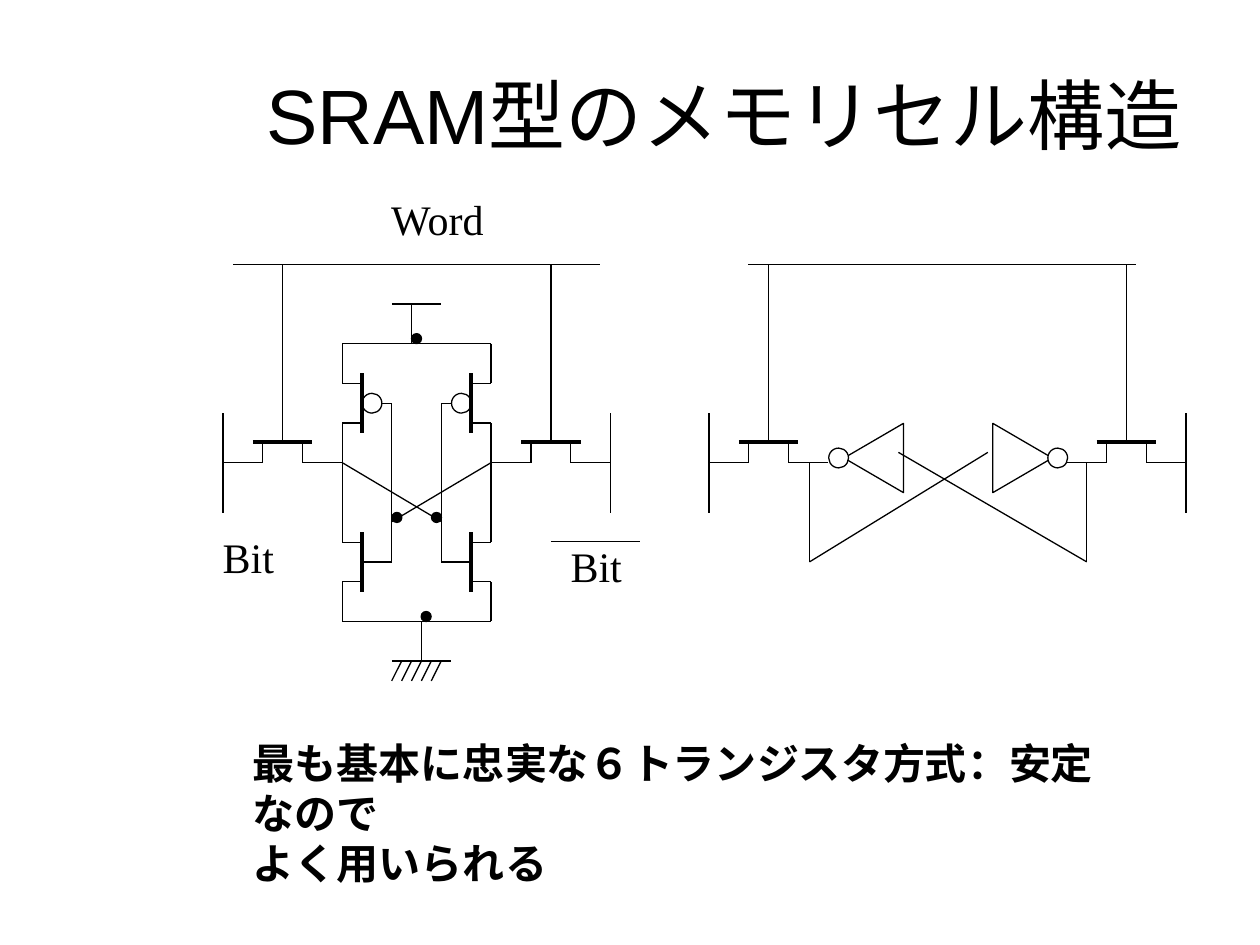
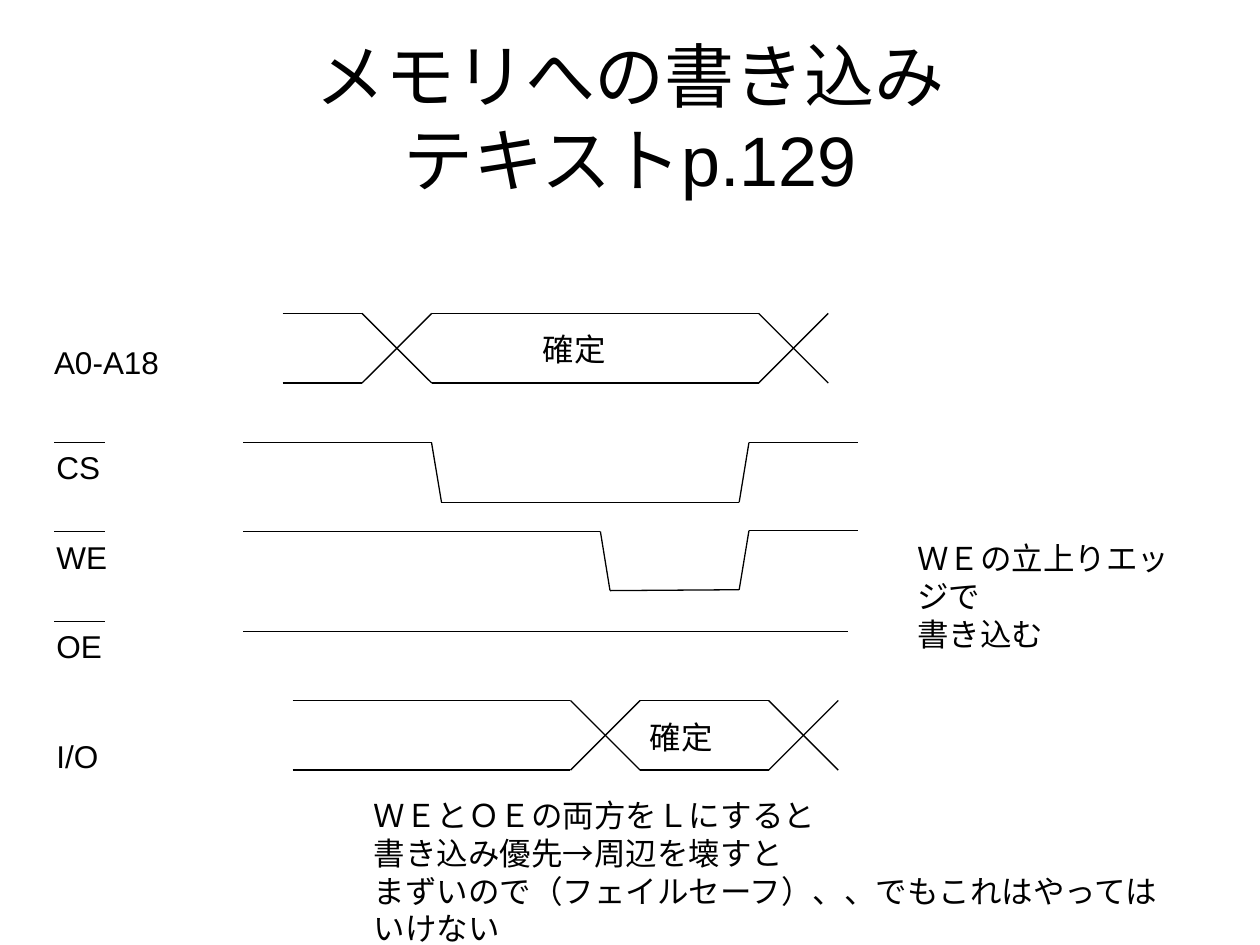
from itertools import pairwise

from pptx import Presentation
from pptx.dml.color import RGBColor
from pptx.enum.shapes import MSO_CONNECTOR, MSO_SHAPE
from pptx.enum.text import MSO_ANCHOR, PP_ALIGN
from pptx.oxml.ns import qn
from pptx.util import Pt

rgb = RGBColor.from_string
INK, PAPER = "000000", "FFFFFF"
THIN, THICK = 0.75, 2.25
TITLE = {"name": "Arial", "size": Pt(44)}
SUBTITLED = {"name": "Arial", "size": Pt(40)}
SIGNAL = {"name": "Arial", "size": Pt(18)}
CIRCUIT = {"name": "Times New Roman", "size": Pt(24)}
REMARK = {**CIRCUIT, "bold": True}


def wire(slide, x1, y1, x2, y2, width=THIN):
    line = slide.shapes.add_connector(
        MSO_CONNECTOR.STRAIGHT, Pt(x1), Pt(y1), Pt(x2), Pt(y2))
    line.line.color.rgb = rgb(INK)
    line.line.width = Pt(width)
    line._element.spPr.append(line._element.spPr.makeelement(qn("a:effectLst"), {}))


def write(slide, words, left, top, width, height, font, wrap=True):
    frame = slide.shapes.add_textbox(Pt(left), Pt(top), Pt(width), Pt(height)).text_frame
    frame.word_wrap = wrap
    frame.text = words
    is_title = font in (TITLE, SUBTITLED)
    frame.vertical_anchor = MSO_ANCHOR.MIDDLE if is_title else MSO_ANCHOR.TOP
    for paragraph in frame.paragraphs:
        paragraph.alignment = PP_ALIGN.CENTER if is_title else PP_ALIGN.LEFT
        for run in paragraph.runs:
            run.font.color.rgb = rgb(INK)
            for key, value in font.items():
                setattr(run.font, key, value)


prs = Presentation()
prs.slide_width, prs.slide_height = Pt(720), Pt(540)
blank = prs.slide_layouts[6]

# Slide 1: SRAM cell
cell = prs.slides.add_slide(blank)
write(cell, "SRAM型のメモリセル構造", 108, 20, 612, 90, TITLE)

# Shared heights of both circuits
word_y, gate_y, lead_y = 151.2, 252.8, 264.4
bit_top, bit_bottom = 236.2, 292.9
pmos_y, nmos_y = 230.4, 321.1
power_y, ground_y = 196.4, 355.1
half_gate, half_channel, reach = 17, 11.3, 34
bubble = 11.3

# Word lines, and access transistors with their bit lines
wire(cell, 133.2, word_y, 342.7, word_y)
wire(cell, 427.7, word_y, 649.4, word_y)
for access_x, bit_side in ((161.5, -1), (314.8, 1), (439.2, -1), (643.7, 1)):
    wire(cell, access_x - half_gate, gate_y, access_x + half_gate, gate_y, THICK)
    wire(cell, access_x, gate_y, access_x, word_y)
    for side in (-1, 1):
        channel_x = access_x + side * half_channel
        wire(cell, access_x + side * reach, lead_y, channel_x, lead_y)
        wire(cell, channel_x, lead_y, channel_x, gate_y)
    bit_x = access_x + bit_side * reach
    wire(cell, bit_x, bit_top, bit_x, bit_bottom)

# Six-transistor latch, mirrored about its centre
latch_x = 238.1
rail, gate, node = 42.5, 31.2, 14.2
cross_y = 298.1
circles = []  # centre x, centre y, diameter, fill
for side in (-1, 1):
    rail_x, gate_x, node_x = (latch_x + side * d for d in (rail, gate, node))
    for mos_y in (pmos_y, nmos_y):
        wire(cell, gate_x, mos_y - half_gate, gate_x, mos_y + half_gate, THICK)
        for end in (-1, 1):
            channel_y = mos_y + end * half_channel
            wire(cell, rail_x, mos_y + end * reach, rail_x, channel_y)
            wire(cell, rail_x, channel_y, gate_x, channel_y)
    wire(cell, rail_x, pmos_y + reach, rail_x, nmos_y - reach)
    wire(cell, gate_x - side * bubble, pmos_y, node_x, pmos_y)
    wire(cell, node_x, pmos_y, node_x, nmos_y)
    wire(cell, node_x, nmos_y, gate_x, nmos_y)
    wire(cell, rail_x, lead_y, latch_x - side * node, cross_y)
    circles.append((gate_x - side * bubble / 2, pmos_y, bubble, None))
    circles.append((latch_x + side * 11.3, 295.7, 5.7, INK))
for supply_y in (power_y, ground_y):
    wire(cell, latch_x - rail, supply_y, latch_x + rail, supply_y)

# Power and ground
wire(cell, 223.9, 173.7, 252.3, 173.7)
wire(cell, 235.3, 173.7, 235.3, power_y)
wire(cell, 241, ground_y, 241, 377.8)
wire(cell, 223.9, 377.8, 257.9, 377.8)
for hatch in range(5):
    hatch_x = 229.5 + 5.65 * hatch
    wire(cell, hatch_x, 377.8, hatch_x - 5.65, 389.1)
circles += [(238, 193.5, 5.7, INK), (243.5, 352.3, 5.7, INK)]

# Equivalent pair of inverters
pair_x, inverter_y = 541.8, 261.7
for side, input_x in ((-1, 564.5), (1, 513.4)):
    inverter = cell.shapes.add_shape(
        MSO_SHAPE.ISOSCELES_TRIANGLE, Pt(pair_x + side * 42.5 - 19.8),
        Pt(inverter_y - 17), Pt(39.6), Pt(34))
    inverter.rotation = 90 * side
    inverter.shadow.inherit = False
    inverter.fill.background()
    inverter.line.color.rgb = rgb(INK)
    inverter.line.width = Pt(THIN)
    loop_x = pair_x + side * 79.2
    wire(cell, loop_x, lead_y, loop_x, nmos_y)
    wire(cell, loop_x, nmos_y, input_x, 258.5)
    circles.append((pair_x + side * 62.6, inverter_y, bubble, PAPER))

# Bubbles and junction dots
for x, y, size, fill in circles:
    circle = cell.shapes.add_shape(
        MSO_SHAPE.OVAL, Pt(x - size / 2), Pt(y - size / 2), Pt(size), Pt(size))
    circle.shadow.inherit = False
    circle.line.color.rgb = rgb(INK)
    circle.line.width = Pt(THIN)
    if fill:
        circle.fill.solid()
        circle.fill.fore_color.rgb = rgb(fill)
    else:
        circle.fill.background()

# Circuit labels
write(cell, "Word", 216.5, 107.3, 69, 36, CIRCUIT, False)
write(cell, "Bit", 120.2, 300.2, 44, 36, CIRCUIT, False)
write(cell, "Bit", 319, 305.5, 44, 36, CIRCUIT, False)
wire(cell, 314.8, 309.6, 365.8, 309.6)
write(cell, "最も基本に忠実な６トランジスタ方式：安定なので\nよく用いられる",
      137.5, 417.6, 507, 65, REMARK)

# Slide 2: write timing
timing = prs.slides.add_slide(blank)
write(timing, "メモリへの書き込み\vテキストp.129", 36, 21.6, 648, 90, SUBTITLED)

# Signal names, with a bar over the active-low ones
for name, left, top, active_low in (
        ("A0-A18", 23.8, 192.2, False), ("CS", 25.2, 252.7, True),
        ("WE", 25.2, 303.8, True), ("OE", 25.2, 355, True), ("I/O", 25.2, 417.6, False)):
    write(timing, name, left, top, 92, 29, SIGNAL)
    if active_low:
        wire(timing, 31, top, 59.8, top)

# Buses: flat stretches, each followed by a crossing
crossing = 39.8
for high, start, first, second in ((179.1, 161.5, 206.9, 433.5), (400.3, 167.2, 326, 439.2)):
    low = high + crossing
    for level, other in ((high, low), (low, high)):
        wire(timing, start, level, first, level)
        wire(timing, first + crossing, level, second, level)
        for cross_x in (first, second):
            wire(timing, cross_x, level, cross_x + crossing, other)

# Control waveforms
waveforms = {
    "CS": [(138.9, 252.9), (246.6, 252.9), (252.3, 287), (422.4, 287),
           (428, 252.9), (490.4, 252.9)],
    "WE": [(138.9, 303.7), (343.1, 303.7), (348.6, 337.5), (422.4, 337),
           (428, 303.2), (490.4, 303.2)],
    "OE": [(138.9, 360.7), (484.7, 360.7)],
}
for corners in waveforms.values():
    for start, end in pairwise(corners):
        wire(timing, *start, *end)

# Notes on the diagram
write(timing, "確定", 303.1, 185, 50.4, 29, SIGNAL, False)
write(timing, "確定", 364.3, 406.8, 50.4, 29, SIGNAL, False)
write(timing, "ＷＥの立上りエッジで\n書き込む", 517, 304.6, 174.2, 50.4, SIGNAL)
write(timing, "ＷＥとＯＥの両方をＬにすると\n書き込み優先→周辺を壊すと\n"
      "まずいので（フェイルセーフ）、、でもこれはやってはいけない",
      206.6, 451.4, 465.8, 72, SIGNAL)

prs.save("out.pptx")
